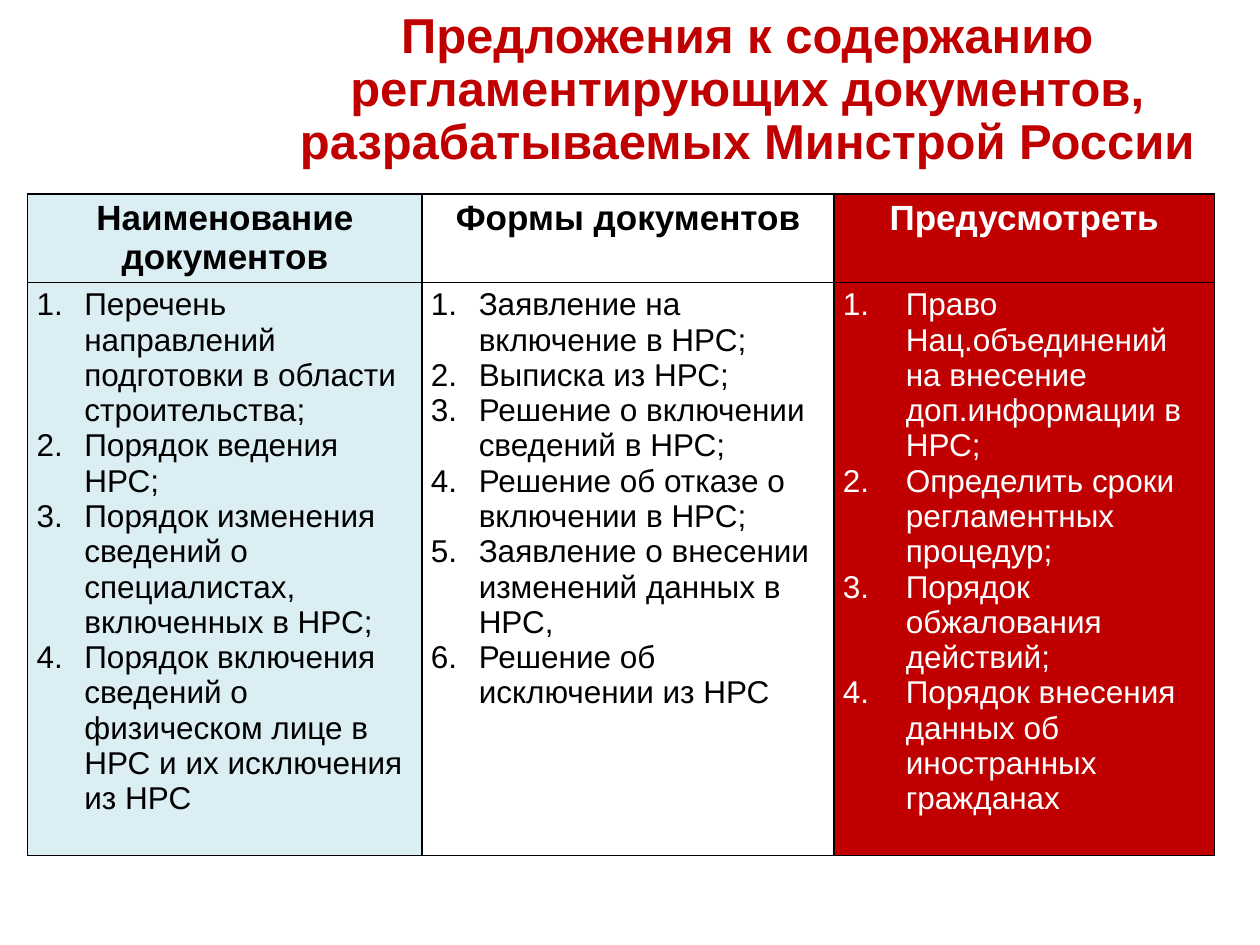
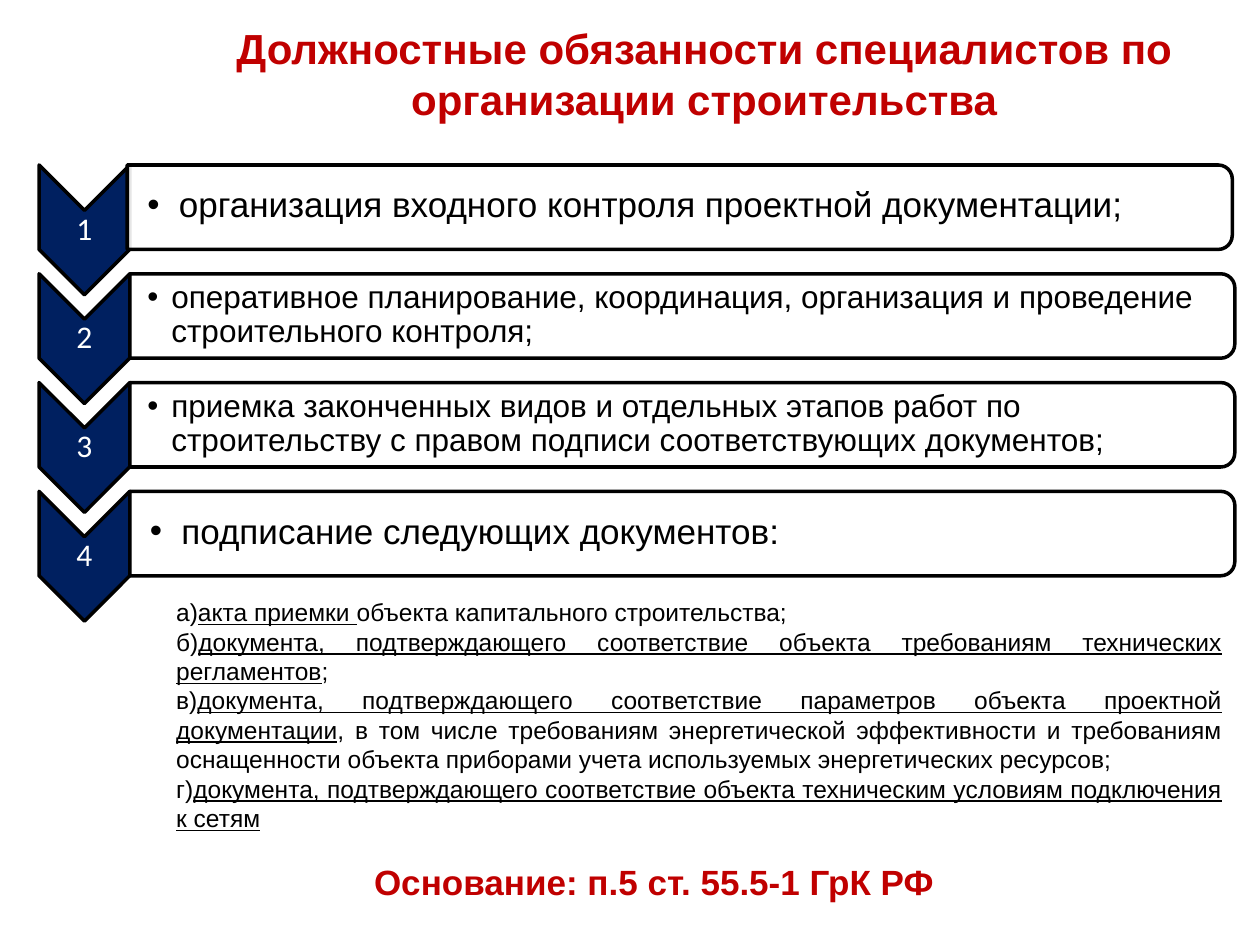
from lxml.etree import SubElement
from pptx import Presentation
from pptx.dml.color import RGBColor
from pptx.enum.shapes import MSO_SHAPE
from pptx.enum.text import MSO_ANCHOR, MSO_AUTO_SIZE, PP_ALIGN
from pptx.oxml import parse_xml
from pptx.oxml.ns import nsdecls, qn
from pptx.util import Inches, Pt

COLORS = {
    "accent": "C00000",
    "navy": "002060",
    "pale": "DBEEF4",
    "white": "FFFFFF",
    "black": "000000",
}
CELL_INSETS = (0.07, 0.04, 0.07, 0.04)
TIGHT_INSETS = (0.01, 0.01, 0.01, 0.01)
BOX_INSETS = (0.1, 0.05, 0.1, 0.05)

DOCUMENT_COLUMNS = [
    {
        "heading": "Наименование документов", "width": 3.13, "indent": 0.38,
        "fill": "pale", "color": "black",
        "items": [
            "Перечень направлений подготовки в области строительства;",
            "Порядок ведения НРС;",
            "Порядок изменения сведений о специалистах, включенных в НРС;",
            "Порядок включения сведений о физическом лице в НРС и их исключения из НРС",
        ],
    },
    {
        "heading": "Формы документов", "width": 3.27, "indent": 0.38,
        "fill": "white", "color": "black",
        "items": [
            "Заявление на включение в НРС;",
            "Выписка из НРС;",
            "Решение о включении сведений в НРС;",
            "Решение об отказе о включении в НРС;",
            "Заявление о внесении изменений данных в НРС,",
            "Решение об исключении из НРС",
        ],
    },
    {
        "heading": "Предусмотреть", "width": 3.02, "indent": 0.5,
        "fill": "accent", "color": "white",
        "items": [
            "Право Нац.объединений на внесение доп.информации в НРС;",
            "Определить сроки регламентных процедур;",
            "Порядок обжалования действий;",
            "Порядок внесения данных об иностранных гражданах",
        ],
    },
]

DUTIES = [
    ("организация входного контроля проектной документации;", 20, 1.01),
    ("оперативное планирование, координация, организация и проведение строительного контроля;", 18, 1.03),
    ("приемка законченных видов и отдельных этапов работ по строительству "
     "с правом подписи соответствующих документов;", 18, 1.03),
    ("подписание следующих документов:", 20, 1.03),
]

SIGNED_DOCUMENTS = [
    ("а)", "акта приемки ", "объекта капитального строительства;"),
    ("б)", "документа, подтверждающего соответствие объекта требованиям технических регламентов", ";"),
    ("в)", "документа, подтверждающего соответствие параметров объекта проектной документации",
     ", в том числе требованиям энергетической эффективности и требованиям оснащенности объекта "
     "приборами учета используемых энергетических ресурсов;"),
    ("г)", "документа, подтверждающего соответствие объекта техническим условиям подключения к сетям", ""),
]


def rgb(name):
    """Return the named palette colour."""
    return RGBColor.from_string(COLORS[name])


def add_run(paragraph, text, size, color="black", bold=False, font="Arial", underline=False):
    """Append one formatted run."""
    run = paragraph.add_run()
    run.text = text
    run.font.name = font
    run.font.size = Pt(size)
    run.font.bold = bold
    run.font.underline = underline
    run.font.color.rgb = rgb(color)


def next_paragraph(frame, index):
    """Return the first paragraph of a frame, or a new one after it."""
    return frame.add_paragraph() if index else frame.paragraphs[0]


def set_bullet(paragraph, indent, numbered=False):
    """Give a paragraph a hanging indent with a number or a dot."""
    properties = paragraph._p.get_or_add_pPr()
    properties.set("marL", str(Inches(indent)))
    properties.set("indent", str(-Inches(indent)))
    if numbered:
        SubElement(properties, qn("a:buFont"), typeface="+mj-lt")
        SubElement(properties, qn("a:buAutoNum"), type="arabicPeriod")
    else:
        SubElement(properties, qn("a:buFont"), typeface="Arial")
        SubElement(properties, qn("a:buChar"), char="•")


def set_frame(frame, insets, anchor=MSO_ANCHOR.TOP, wrap=True):
    """Set the margins, anchor and wrapping of a text frame."""
    frame.margin_left, frame.margin_top, frame.margin_right, frame.margin_bottom = map(Inches, insets)
    frame.vertical_anchor = anchor
    frame.auto_size = MSO_AUTO_SIZE.NONE
    frame.word_wrap = wrap


def add_text_box(slide, box, insets=BOX_INSETS, **options):
    """Add an empty text box and return its frame."""
    frame = slide.shapes.add_textbox(*map(Inches, box)).text_frame
    set_frame(frame, insets, **options)
    return frame


def add_titled_slide(presentation, title, box, size, insets=BOX_INSETS, anchor=MSO_ANCHOR.TOP, spacing=1.0):
    """Add a slide with a red centred title."""
    slide = presentation.slides.add_slide(presentation.slide_layouts[5])
    shape = slide.shapes.title
    shape.left, shape.top, shape.width, shape.height = map(Inches, box)
    set_frame(shape.text_frame, insets, anchor)
    paragraph = shape.text_frame.paragraphs[0]
    paragraph.alignment = PP_ALIGN.CENTER
    paragraph.line_spacing = spacing
    add_run(paragraph, title, size, "accent", bold=True)
    return slide


def format_cell(cell, fill):
    """Fill a cell and draw its black borders."""
    cell.margin_left, cell.margin_top, cell.margin_right, cell.margin_bottom = map(Inches, CELL_INSETS)
    properties = cell._tc.get_or_add_tcPr()
    for side in ("lnL", "lnR", "lnT", "lnB"):
        properties.append(parse_xml(
            f'<a:{side} {nsdecls("a")} w="{Pt(1)}"><a:solidFill>'
            f'<a:srgbClr val="{COLORS["black"]}"/></a:solidFill></a:{side}>'))
    cell.fill.solid()
    cell.fill.fore_color.rgb = rgb(fill)


def add_documents_table(slide, left, top, row_heights):
    """Add the table of documents, one column per group."""
    width = sum(column["width"] for column in DOCUMENT_COLUMNS)
    table = slide.shapes.add_table(
        len(row_heights), len(DOCUMENT_COLUMNS),
        *map(Inches, (left, top, width, sum(row_heights)))).table
    table.first_row = table.horz_banding = False
    for row, height in zip(table.rows, row_heights):
        row.height = Inches(height)
    for index, column in enumerate(DOCUMENT_COLUMNS):
        table.columns[index].width = Inches(column["width"])
        heading, body = table.cell(0, index), table.cell(1, index)
        for cell in (heading, body):
            format_cell(cell, column["fill"])
        paragraph = heading.text_frame.paragraphs[0]
        paragraph.alignment = PP_ALIGN.CENTER
        add_run(paragraph, column["heading"], 20, column["color"], bold=True)
        for position, item in enumerate(column["items"]):
            paragraph = next_paragraph(body.text_frame, position)
            set_bullet(paragraph, column["indent"], numbered=True)
            add_run(paragraph, item, 18, column["color"])


def add_turned_shape(slide, kind, box, fill):
    """Add a shape turned by 90 degrees that covers the given box."""
    left, top, width, height = box
    shape = slide.shapes.add_shape(kind, *map(Inches, (
        left + (width - height) / 2, top + (height - width) / 2, height, width)))
    shape.rotation = 90
    shape.shadow.inherit = False
    shape.fill.solid()
    shape.fill.fore_color.rgb = rgb(fill)
    shape.line.color.rgb = rgb("black")
    shape.line.width = Pt(2)
    return shape


def add_duty(slide, top, number, text, size, bar_left):
    """Add a numbered chevron and the bar with its duty."""
    add_turned_shape(slide, MSO_SHAPE.CHEVRON, (0.31, top, 0.72, 1.03), "navy")
    frame = add_text_box(slide, (0.31, top + 0.36, 0.72, 0.31), TIGHT_INSETS, anchor=MSO_ANCHOR.MIDDLE)
    paragraph = frame.paragraphs[0]
    paragraph.alignment = PP_ALIGN.CENTER
    paragraph.line_spacing = 0.9
    add_run(paragraph, str(number), 18, "white", font="Calibri")

    bar = add_turned_shape(slide, MSO_SHAPE.ROUND_2_SAME_RECTANGLE, (bar_left, top, 8.77, 0.67), "white")
    color = bar.fill._xPr.find(qn("a:solidFill")).find(qn("a:srgbClr"))
    SubElement(color, qn("a:alpha"), val="90000")
    large = size == 20
    insets = (0.16 if large else 0.14, *TIGHT_INSETS[1:])
    frame = add_text_box(slide, (bar_left, top + 0.03, 8.74, 0.6), insets, anchor=MSO_ANCHOR.MIDDLE)
    paragraph = frame.paragraphs[0]
    set_bullet(paragraph, 0.25 if large else 0.19)
    paragraph.line_spacing = 0.9
    add_run(paragraph, text, size)


def add_signed_documents(slide, box):
    """Add the justified list of documents to be signed."""
    frame = add_text_box(slide, box)
    for index, (letter, document, ending) in enumerate(SIGNED_DOCUMENTS):
        paragraph = next_paragraph(frame, index)
        paragraph.alignment = PP_ALIGN.JUSTIFY
        add_run(paragraph, letter, 14)
        add_run(paragraph, document, 14, underline=True)
        if ending:
            add_run(paragraph, ending, 14)


def add_legal_basis(slide, box):
    """Add the line that names the legal basis."""
    paragraph = add_text_box(slide, box, wrap=False).paragraphs[0]
    paragraph.alignment = PP_ALIGN.JUSTIFY
    add_run(paragraph, "Основание: п.5 ст. 55.5-1 ГрК РФ", 20, "accent", bold=True)


def build_documents_slide(presentation):
    """Build the slide with proposals for regulating documents."""
    slide = add_titled_slide(
        presentation,
        "Предложения к содержанию регламентирующих документов, разрабатываемых Минстрой России",
        (1.62, 0.56, 8.62, 0.83), 28, CELL_INSETS, MSO_ANCHOR.BOTTOM, 0.9)
    add_documents_table(slide, 0.22, 1.54, (0.7, 4.55))


def build_duties_slide(presentation):
    """Build the slide with the duties of specialists."""
    slide = add_titled_slide(
        presentation, "Должностные обязанности специалистов по организации строительства",
        (1.69, 0.13, 7.8, 0.91), 24)
    first_top, last_top = 1.31, 3.9
    pitch = (last_top - first_top) / (len(DUTIES) - 1)
    for index, duty in enumerate(DUTIES):
        add_duty(slide, first_top + index * pitch, index + 1, *duty)
    add_signed_documents(slide, (1.3, 4.69, 8.5, 1.99))
    add_legal_basis(slide, (2.87, 6.78, 4.68, 0.44))


def main():
    """Build and save the presentation."""
    presentation = Presentation()
    presentation.slide_width, presentation.slide_height = Inches(10), Inches(7.5)
    build_documents_slide(presentation)
    build_duties_slide(presentation)
    presentation.save("out.pptx")


if __name__ == "__main__":
    main()
